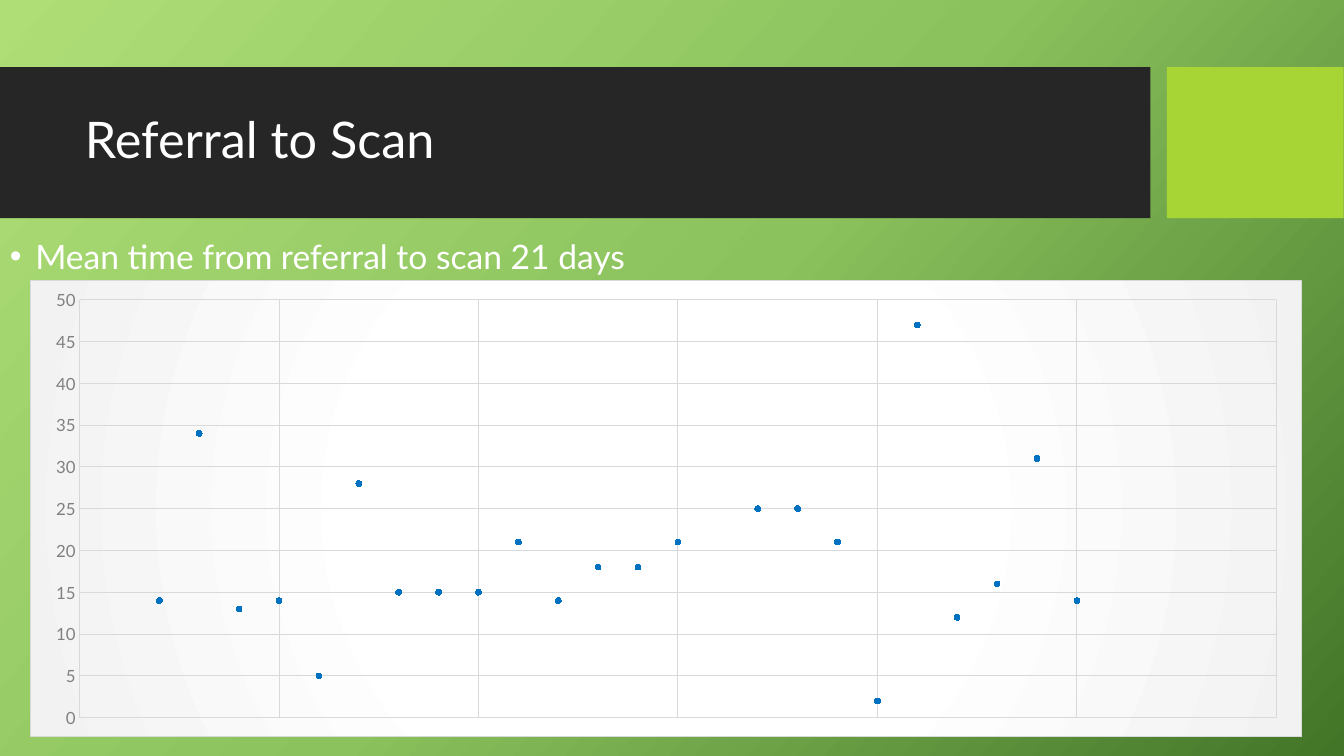
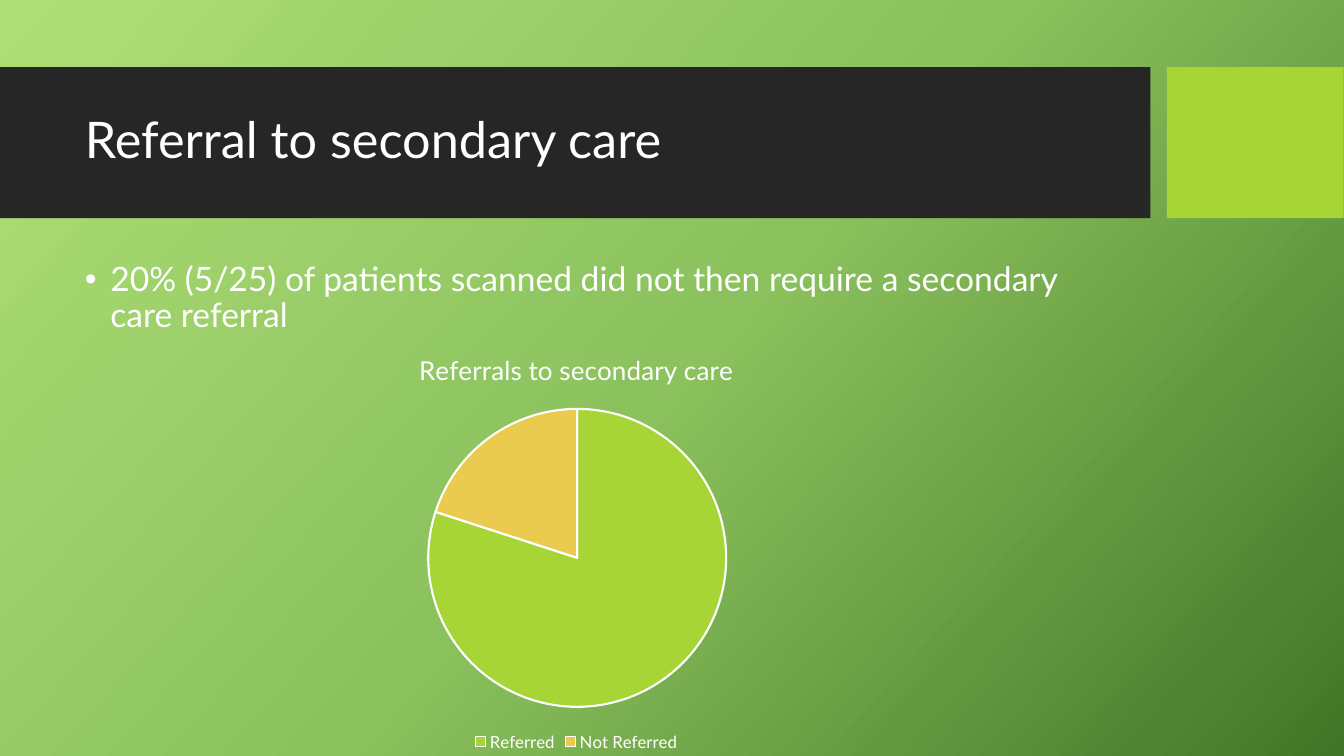
from dataclasses import dataclass
from typing import NamedTuple

from pptx import Presentation
from pptx.chart.data import CategoryChartData, XyChartData
from pptx.dml.color import RGBColor
from pptx.enum.chart import XL_CHART_TYPE as ChartType
from pptx.enum.chart import XL_LEGEND_POSITION as LegendPos
from pptx.enum.chart import XL_MARKER_STYLE as Marker
from pptx.enum.chart import XL_TICK_MARK as Tick
from pptx.enum.shapes import MSO_SHAPE as Preset
from pptx.enum.text import MSO_ANCHOR as Anchor
from pptx.oxml import parse_xml
from pptx.oxml.ns import nsdecls, qn
from pptx.util import Cm, Pt


class Box(NamedTuple):
    left: float
    top: float
    width: float
    height: float

    def emu(self) -> list:
        return [Cm(v) for v in self]


@dataclass(frozen=True)
class Theme:
    font: str = "Lato"
    white: str = "FFFFFF"
    band: str = "262626"
    accent: str = "A7D535"
    gold: str = "EACA4F"
    dot: str = "0070C0"
    grid: str = "D9D9D9"
    axis: str = "808080"
    backdrop: tuple = ((0, "AFDE77"), (50, "8BC25D"), (100, "437528"))
    panel: tuple = ((43, "FFFFFF"), (100, "F2F2F2"))
    title: float = 36
    body: float = 24
    chart_title: float = 18.6
    label: float = 12


@dataclass(frozen=True)
class Band:
    box: Box
    color: str


T = Theme()
BANDS = (
    Band(Box(0, 1.69, 28.99, 3.81), T.band),
    Band(Box(29.41, 1.69, 4.45, 3.81), T.accent),
)
TITLE_BOX = Box(1.89, 2.08, 26.7, 3)
BULLET_INDENT = Cm(0.64)
SCAN_DAYS = (None, 14, 34, 13, 14, 5, 28, 15, 15, 15, 21, 14, 18, 18, 21,
             None, 25, 25, 21, 2, 47, 12, 16, 31, 14)
REFERRALS = {"Referred": (80, T.accent), "Not Referred": (20, T.gold)}


def rgb(color: str) -> RGBColor:
    return RGBColor.from_string(color)


def gradient_xml(stops: tuple, direction: str) -> str:
    items = "".join(f'<a:gs pos="{pos * 1000}"><a:srgbClr val="{color}"/></a:gs>'
                    for pos, color in stops)
    return f'<a:gradFill {nsdecls("a")}><a:gsLst>{items}</a:gsLst>{direction}</a:gradFill>'


def set_font(font, size: float, color: str = T.white) -> None:
    font.name, font.size, font.bold = T.font, Pt(size), False
    font.color.rgb = rgb(color)


def set_line(line, color: str, width: float = 0.75) -> None:
    line.color.rgb = rgb(color)
    line.width = Pt(width)


def set_backdrop(master) -> None:
    master.background.fill.gradient()
    old = next(master.element.iter(qn("a:gradFill")))
    direction = f'<a:lin ang="{42 * 60000}" scaled="0"/>'
    old.getparent().replace(old, parse_xml(gradient_xml(T.backdrop, direction)))


def add_text(s, text: str, box: Box, *, size: float, anchor=Anchor.TOP,
             bullet: bool = False) -> None:
    tf = s.shapes.add_textbox(*box.emu()).text_frame
    tf.word_wrap = True
    tf.vertical_anchor = anchor
    p = tf.paragraphs[0]
    p.line_spacing = 0.9
    if bullet:
        pPr = p._p.get_or_add_pPr()
        pPr.set("marL", str(BULLET_INDENT))
        pPr.set("indent", str(-BULLET_INDENT))
        pPr.append(parse_xml(f'<a:buFont {nsdecls("a")} typeface="Arial"/>'))
        pPr.append(parse_xml(f'<a:buChar {nsdecls("a")} char="•"/>'))
    r = p.add_run()
    r.text = text
    set_font(r.font, size)


def add_slide(prs, title: str, point: str, point_box: Box):
    s = prs.slides.add_slide(prs.slide_layouts[6])
    for band in BANDS:
        sp = s.shapes.add_shape(Preset.RECTANGLE, *band.box.emu())
        sp.shadow.inherit = False
        sp.fill.solid()
        sp.fill.fore_color.rgb = rgb(band.color)
        sp.line.fill.background()
    add_text(s, title, TITLE_BOX, size=T.title, anchor=Anchor.MIDDLE)
    add_text(s, point, point_box, size=T.body, bullet=True)
    return s


def add_chart(s, kind, box: Box, data):
    chart = s.shapes.add_chart(kind, *box.emu(), data).chart
    set_font(chart.font, 10)
    chart.has_title = chart.has_legend = False
    return chart


def fill_panel(chart) -> None:
    direction = ('<a:path path="circle"><a:fillToRect l="50000" t="50000" '
                 'r="50000" b="50000"/></a:path>')
    chart.element.find(qn("c:chart")).addnext(parse_xml(
        f'<c:spPr {nsdecls("c", "a")}>{gradient_xml(T.panel, direction)}'
        f'<a:ln w="{Pt(0.75)}"><a:solidFill><a:srgbClr val="{T.grid}"/>'
        '</a:solidFill></a:ln></c:spPr>'))


def place_part(part, index: int, target: str = "", **percents: float) -> None:
    for old in part.findall(qn("c:layout")):
        part.remove(old)
    inner = f'<c:layoutTarget val="{target}"/>' if target else ""
    modes = '<c:xMode val="edge"/><c:yMode val="edge"/>'
    sizes = "".join(f'<c:{key} val="{value / 100:.3f}"/>'
                    for key, value in percents.items())
    part.insert(index, parse_xml(
        f'<c:layout {nsdecls("c")}><c:manualLayout>{inner}{modes}{sizes}'
        '</c:manualLayout></c:layout>'))


def clear_missing_points(chart) -> None:
    for values in chart.element.iter(qn("c:yVal")):
        for pt in list(values.iter(qn("c:pt"))):
            if SCAN_DAYS[int(pt.get("idx"))] is None:
                pt.getparent().remove(pt)


def add_scan_chart(s, box: Box) -> None:
    data = XyChartData()
    series = data.add_series("Series 1")
    for patient, days in enumerate(SCAN_DAYS, 1):
        series.add_data_point(patient, days)
    chart = add_chart(s, ChartType.XY_SCATTER, box, data)
    clear_missing_points(chart)
    fill_panel(chart)
    chart.plots[0].vary_by_categories = False

    for axis, top in ((chart.category_axis, 30), (chart.value_axis, 50)):
        axis.minimum_scale, axis.maximum_scale, axis.major_unit = 0, top, 5
        axis.has_major_gridlines = True
        set_line(axis.major_gridlines.format.line, T.grid)
        axis.major_tick_mark = axis.minor_tick_mark = Tick.NONE
    chart.category_axis.visible = False
    chart.value_axis.format.line.fill.background()
    set_font(chart.value_axis.tick_labels.font, T.label, T.axis)

    dots = chart.plots[0].series[0]
    dots.format.line.fill.background()
    dots.marker.style, dots.marker.size = Marker.CIRCLE, 4
    dots.marker.format.fill.solid()
    dots.marker.format.fill.fore_color.rgb = rgb(T.dot)
    set_line(dots.marker.format.line, T.dot)


def add_referral_chart(s, box: Box) -> None:
    data = CategoryChartData()
    data.categories = list(REFERRALS)
    data.add_series("Series 1", [share for share, _ in REFERRALS.values()])
    chart = add_chart(s, ChartType.PIE, box, data)
    chart.has_title = True
    p = chart.chart_title.text_frame.paragraphs[0]
    r = p.add_run()
    r.text = "Referrals to secondary care"
    set_font(r.font, T.chart_title)
    chart.chart_title.include_in_layout = False
    place_part(next(chart.element.iter(qn("c:title"))), 1, x=26.4, y=1.3)
    place_part(next(chart.element.iter(qn("c:plotArea"))), 0, "inner",
               x=28.4, y=16.4, w=43.4, h=71.8)

    chart.has_legend = True
    chart.legend.position = LegendPos.BOTTOM
    chart.legend.include_in_layout = False
    set_font(chart.legend.font, T.label)

    slices = chart.plots[0].series[0].points
    for i, (_, color) in enumerate(REFERRALS.values()):
        fmt = slices[i].format
        fmt.fill.solid()
        fmt.fill.fore_color.rgb = rgb(color)
        set_line(fmt.line, T.white, 1.5)


def main() -> None:
    prs = Presentation()
    prs.slide_width, prs.slide_height = Cm(33.87), Cm(19.05)
    set_backdrop(prs.slide_master)

    s = add_slide(prs, "Referral to Scan", "Mean time from referral to scan 21 days",
                  Box(0, 5.93, 25.5, 10))
    add_scan_chart(s, Box(0.76, 7.06, 32.06, 11.52))

    s = add_slide(prs, "Referral to secondary care",
                  "20% (5/25) of patients scanned did not then require a secondary "
                  "care referral", Box(1.89, 6.49, 26.7, 10))
    add_referral_chart(s, Box(5.87, 8.59, 17.32, 10.46))

    prs.save("out.pptx")


if __name__ == "__main__":
    main()
